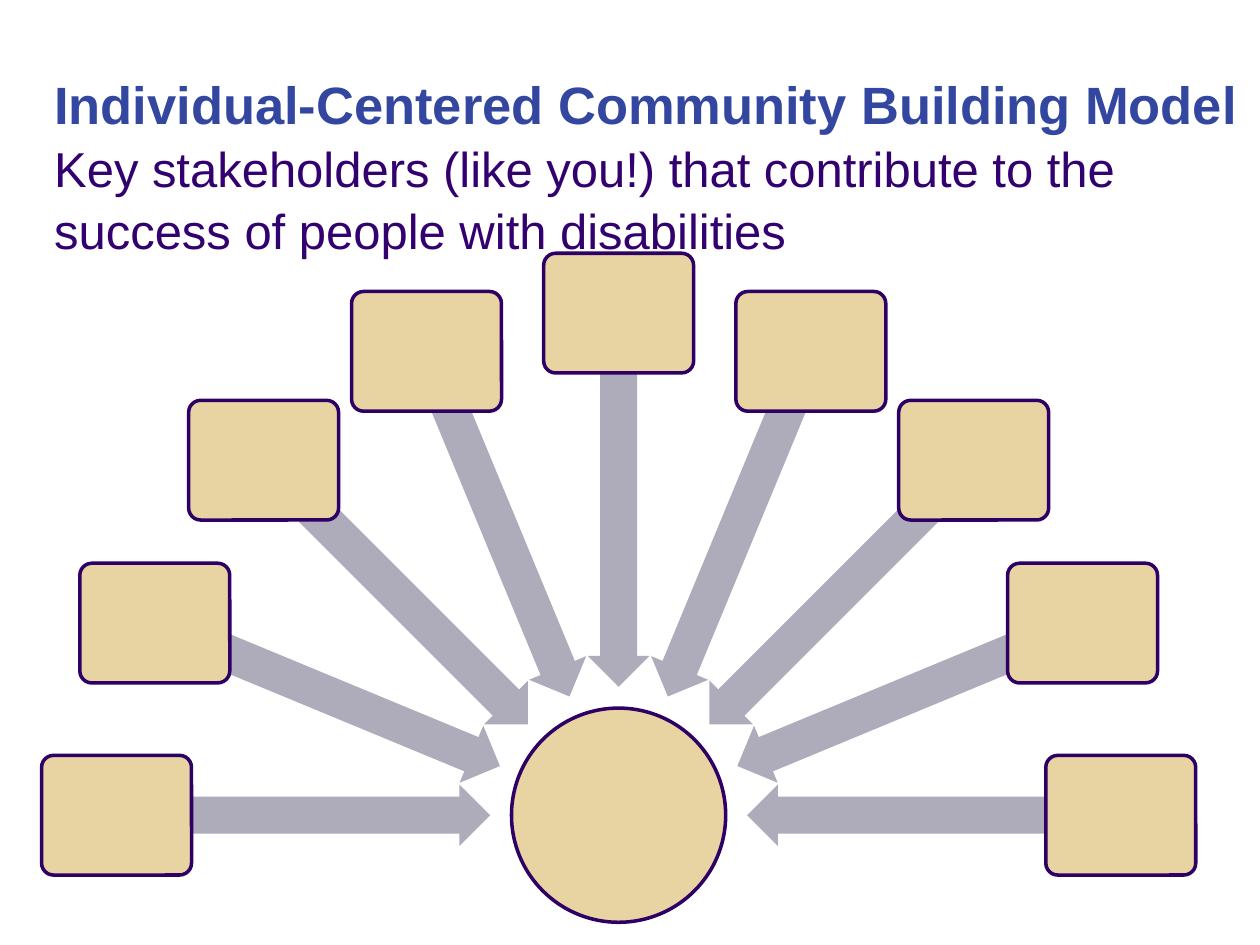
from math import cos, radians, sin

from pptx import Presentation
from pptx.dml.color import RGBColor
from pptx.enum import shapes, text
from pptx.util import Inches, Pt

COLORS = {
    "head": "3347A0",
    "sub": "33006F",
    "edge": "2E0065",
    "tan": "E8D3A2",
    "arrow": "AEABBB",
}
KIND = shapes.MSO_SHAPE


def color(name):
    return RGBColor.from_string(COLORS[name])


def write(para, words, size, tint, bold=False):
    """Add formatted text to a paragraph."""
    para.alignment = text.PP_ALIGN.LEFT
    para.line_spacing = 1.05
    para.space_before = Pt(0)
    run = para.add_run()
    run.text = words
    run.font.name = "Arial"
    run.font.size = Pt(size)
    run.font.bold = bold
    run.font.color.rgb = color(tint)


def add_part(slide, kind, x, y, w, h, fill, edge=None):
    """Add a shape centred on x, y."""
    part = slide.shapes.add_shape(
        kind, Inches(x - w / 2), Inches(y - h / 2), Inches(w), Inches(h))
    part.shadow.inherit = False
    part.fill.solid()
    part.fill.fore_color.rgb = color(fill)
    if edge:
        part.line.color.rgb = color(edge)
        part.line.width = Pt(2)
    else:
        part.line.fill.background()
    return part


def add_title(slide, left, top, width, height):
    title = slide.shapes.title
    title.left, title.top = Inches(left), Inches(top)
    title.width, title.height = Inches(width), Inches(height)
    frame = title.text_frame
    frame.word_wrap = True
    frame.auto_size = text.MSO_AUTO_SIZE.NONE
    frame.vertical_anchor = text.MSO_ANCHOR.TOP
    write(frame.paragraphs[0], "Individual-Centered Community Building Model",
          30, "head", bold=True)
    write(frame.add_paragraph(),
          "Key stakeholders (like you!) that contribute to the "
          "success of people with disabilities", 28, "sub")


def add_fan(slide, left, top, width, height, count=9):
    """Half ring of boxes whose arrows point at a hub."""
    hub, box_w, box_h = 1.7, 1.19, 0.95
    x, y = left + width / 2, top + height - hub / 2
    reach = (width - box_w) / 2
    mid = 2.5  # hub centre to arrow centre

    # Hub
    add_part(slide, KIND.OVAL, x, y, hub, hub, "tan", "edge")

    # Arrows and stakeholder boxes
    for i in range(count):
        turn = 180 + 180 * i / (count - 1)
        dx, dy = cos(radians(turn)), sin(radians(turn))
        arrow = add_part(slide, KIND.LEFT_ARROW, x + mid * dx, y + mid * dy,
                         2.96, 0.49, "arrow")
        arrow.adjustments[0] = 0.6
        arrow.adjustments[1] = 0.5
        arrow.rotation = turn % 360
        box = add_part(slide, KIND.ROUNDED_RECTANGLE, x + reach * dx,
                       y + reach * dy, box_w, box_h, "tan", "edge")
        box.adjustments[0] = 0.1


def main():
    deck = Presentation()
    deck.slide_width, deck.slide_height = Inches(10), Inches(7.5)
    slide = deck.slides.add_slide(deck.slide_layouts[5])
    add_fan(slide, 0.33, 2.01, 9.16, 5.31)
    add_title(slide, 0.33, 0.5, 9.67, 1.55)
    deck.save("out.pptx")


if __name__ == "__main__":
    main()
